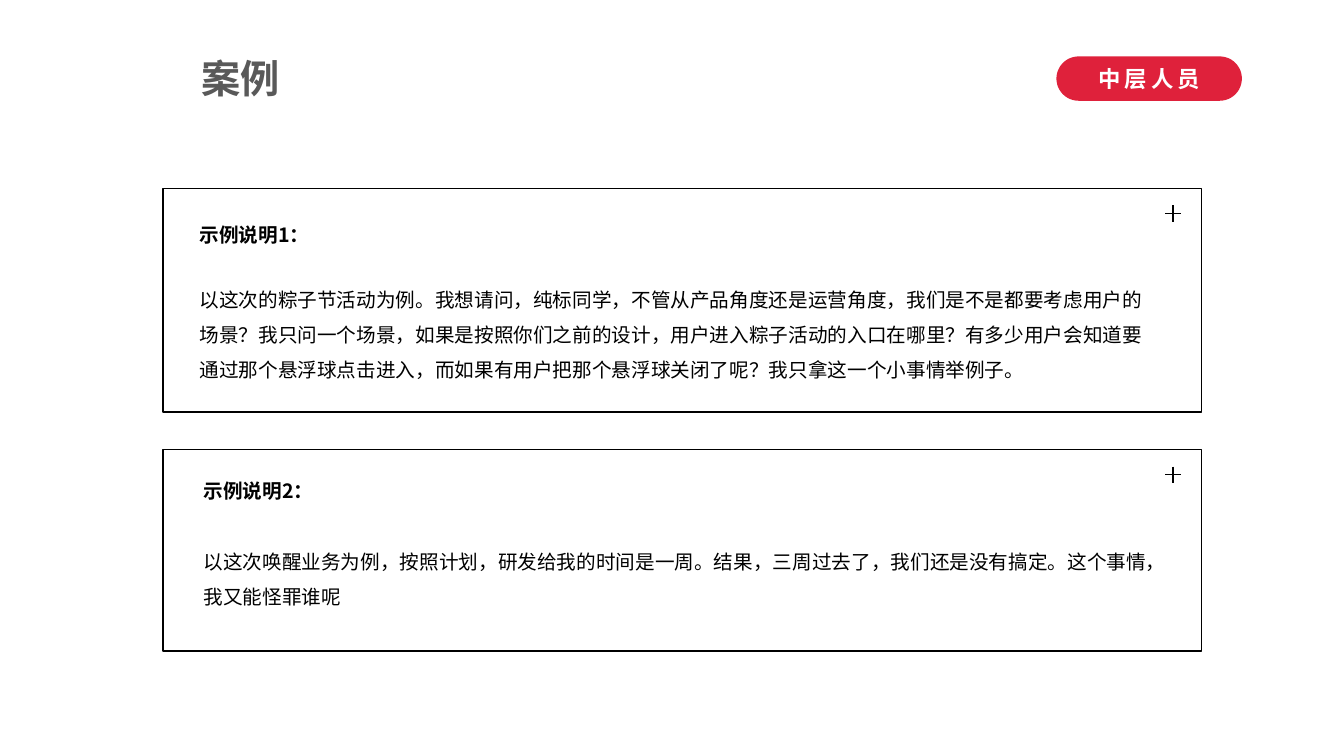
from dataclasses import dataclass

from lxml import etree
from pptx import Presentation
from pptx.dml.color import RGBColor
from pptx.enum.shapes import MSO_CONNECTOR, MSO_SHAPE
from pptx.enum.text import MSO_ANCHOR, PP_ALIGN
from pptx.oxml.ns import qn
from pptx.slide import Slide
from pptx.text.text import TextFrame, _Paragraph
from pptx.util import Pt

STRAIGHT = MSO_CONNECTOR.STRAIGHT
RECTANGLE = MSO_SHAPE.RECTANGLE
ROUNDED = MSO_SHAPE.ROUNDED_RECTANGLE
LEFT = PP_ALIGN.LEFT
CENTER = PP_ALIGN.CENTER
TOP = MSO_ANCHOR.TOP
MIDDLE = MSO_ANCHOR.MIDDLE

BLACK = RGBColor(0x00, 0x00, 0x00)
WHITE = RGBColor(0xFF, 0xFF, 0xFF)
GREY = RGBColor(0x59, 0x59, 0x59)
RED = RGBColor(0xDF, 0x21, 0x3B)

CJK_FONT = "Noto Sans CJK SC"
LATIN_FONT = "Arial"
TITLE_ONLY = 5

CARD_LEFT = 116.6
CARD_WIDTH = 741.6
PLUS_FROM_RIGHT = 20.2
PLUS_FROM_TOP = 18
PLUS_ARM = 5.8


@dataclass(frozen=True)
class Style:
    size: float
    color: RGBColor
    bold: bool = False
    font: str = CJK_FONT
    tracking: float = 0


@dataclass(frozen=True)
class Example:
    top: float
    height: float
    text_left: float
    text_top: float
    text_width: float
    inset_x: float
    inset_y: float
    gap: float
    heading: str
    body: str


TITLE_STYLE = Style(28, GREY, bold=True)
HEADING_STYLE = Style(14, BLACK, bold=True)
BODY_STYLE = Style(14, BLACK)
BADGE_STYLE = Style(16, WHITE, bold=True, font=LATIN_FONT, tracking=3)

EXAMPLES = [
    Example(
        134.6, 159.8, 135.4, 152.6, 699.8, 7.2, 3.6, 20.7,
        "示例说明1：",
        "以这次的粽子节活动为例。我想请问，纯标同学，不管从产品角度还是运营角度，"
        "我们是不是都要考虑用户的场景？我只问一个场景，如果是按照你们之前的设计，"
        "用户进入粽子活动的入口在哪里？有多少用户会知道要通过那个悬浮球点击进入，"
        "而如果有用户把那个悬浮球关闭了呢？我只拿这一个小事情举例子。",
    ),
    Example(
        321.1, 144, 136.8, 334.1, 694.1, 8.6, 4.3, 25.7,
        "示例说明2：",
        "以这次唤醒业务为例，按照计划，研发给我的时间是一周。结果，"
        "三周过去了，我们还是没有搞定。这个事情，我又能怪罪谁呢",
    ),
]


def add_span(para: _Paragraph, text: str, style: Style) -> None:
    span = para.add_run()
    span.text = text
    span.font.size = Pt(style.size)
    span.font.bold = style.bold
    span.font.color.rgb = style.color
    span.font.name = style.font
    properties = span.font._element
    etree.SubElement(properties, qn("a:ea")).set("typeface", style.font)
    if style.tracking:
        properties.set("spc", str(int(style.tracking * 100)))


def set_insets(frame: TextFrame, horizontal: float, vertical: float) -> None:
    frame.margin_left = frame.margin_right = Pt(horizontal)
    frame.margin_top = frame.margin_bottom = Pt(vertical)


def add_stroke(page: Slide, x1: float, y1: float, x2: float, y2: float) -> None:
    stroke = page.shapes.add_connector(STRAIGHT, Pt(x1), Pt(y1), Pt(x2), Pt(y2))
    stroke.line.color.rgb = BLACK
    stroke.line.width = Pt(1)
    etree.SubElement(stroke._element.spPr, qn("a:effectLst"))


def add_plus(page: Slide, x: float, y: float) -> None:
    add_stroke(page, x - PLUS_ARM, y, x + PLUS_ARM, y)
    add_stroke(page, x, y - PLUS_ARM, x, y + PLUS_ARM)


def add_example(page: Slide, example: Example) -> None:
    card = page.shapes.add_shape(
        RECTANGLE, Pt(CARD_LEFT), Pt(example.top), Pt(CARD_WIDTH), Pt(example.height)
    )
    card.shadow.inherit = False
    card.fill.solid()
    card.fill.fore_color.rgb = WHITE
    card.line.color.rgb = BLACK
    card.line.width = Pt(1)
    add_plus(
        page, CARD_LEFT + CARD_WIDTH - PLUS_FROM_RIGHT, example.top + PLUS_FROM_TOP
    )

    text_height = example.top + example.height - example.text_top
    box = page.shapes.add_textbox(
        Pt(example.text_left), Pt(example.text_top),
        Pt(example.text_width), Pt(text_height),
    )
    frame = box.text_frame
    frame.word_wrap = True
    set_insets(frame, example.inset_x, example.inset_y)
    heading = frame.paragraphs[0]
    heading.line_spacing = 1.2
    add_span(heading, example.heading, HEADING_STYLE)
    body = frame.add_paragraph()
    body.line_spacing = 1.5
    body.space_before = Pt(example.gap)
    add_span(body, example.body, BODY_STYLE)


def add_title(page: Slide, text: str) -> None:
    title = page.shapes.title
    title.left, title.top = Pt(136.8), Pt(35.3)
    title.width, title.height = Pt(71.3), Pt(41)
    frame = title.text_frame
    frame.word_wrap = False
    frame.vertical_anchor = TOP
    set_insets(frame, 7.2, 3.6)
    para = frame.paragraphs[0]
    para.alignment = LEFT
    add_span(para, text, TITLE_STYLE)


def add_badge(page: Slide, text: str) -> None:
    badge = page.shapes.add_shape(ROUNDED, Pt(754.6), Pt(40.3), Pt(132.5), Pt(31.7))
    badge.adjustments[0] = 0.5
    badge.shadow.inherit = False
    badge.fill.solid()
    badge.fill.fore_color.rgb = RED
    badge.line.fill.background()
    frame = badge.text_frame
    frame.word_wrap = False
    frame.vertical_anchor = MIDDLE
    set_insets(frame, 0, 0)
    para = frame.paragraphs[0]
    para.alignment = CENTER
    add_span(para, text, BADGE_STYLE)


def main() -> None:
    deck = Presentation()
    deck.slide_width, deck.slide_height = Pt(960), Pt(540)
    page = deck.slides.add_slide(deck.slide_layouts[TITLE_ONLY])
    add_title(page, "案例")
    add_badge(page, "中层人员")
    for example in EXAMPLES:
        add_example(page, example)
    deck.save("out.pptx")


if __name__ == "__main__":
    main()
